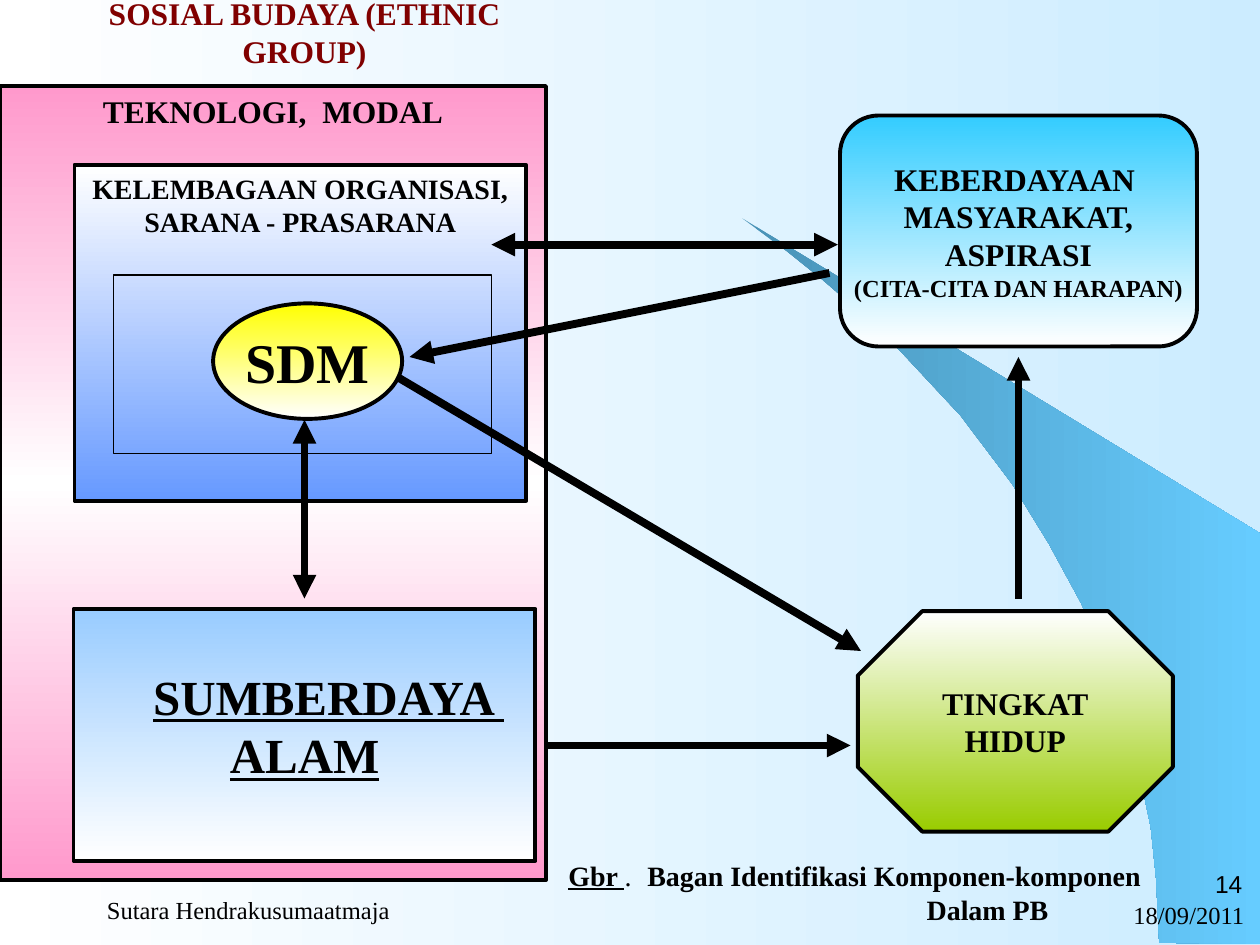
from copy import deepcopy
from dataclasses import dataclass

from lxml import etree
from pptx import Presentation
from pptx import util as u
from pptx.dml.color import RGBColor
from pptx.enum import shapes, text
from pptx.oxml.ns import qn

CELL = u.Inches(10) // 120
COLUMNS, ROWS = 120, 90
KIND = shapes.MSO_SHAPE
ALIGN = text.PP_ALIGN
ANCHOR = text.MSO_ANCHOR


@dataclass(frozen=True)
class Theme:
    serif: str = "Times New Roman"
    sans: str = "Arial"
    ink: str = "000000"
    title: str = "800000"
    page: tuple = ("FFFFFF", "CCECFF")
    swoosh: tuple = ("4992B6", "66CCFF")
    capital: tuple = ("FF99CC", "FFFFFF", "FF99CC")
    institution: tuple = ("FFFFFF", "6699FF")
    people: tuple = ("FFFF00", "FFFFFF")
    nature: tuple = ("99CCFF", "FFFFFF")
    empowerment: tuple = ("33CCFF", "FFFFFF")
    living: tuple = ("FFFFFF", "99CC00")
    small: int = 14
    label: int = 16
    body: int = 18
    large: int = 28
    huge: int = 32
    hairline: float = 0.75
    outline: float = 2.25
    arrow: float = 4.5


THEME = Theme()


@dataclass(frozen=True)
class Box:
    left: float
    top: float
    width: float
    height: float

    def inner(self, left, top, width, height):
        return Box(self.left + left, self.top + top, width, height)

    def emu(self):
        return [round(v * CELL) for v in (self.left, self.top, self.width, self.height)]


def paint(fill, node, colours, angle):
    fill.gradient()
    fill.gradient_angle = angle
    stop_list = node.find(".//" + qn("a:gsLst"))
    while len(stop_list) < len(colours):
        stop_list.append(deepcopy(stop_list[-1]))
    for index, (stop, colour) in enumerate(zip(fill.gradient_stops, colours)):
        stop.color.rgb = RGBColor.from_string(colour)
        stop.position = index / (len(colours) - 1)


def style(para, size, colour=THEME.ink, bold=True, font=THEME.serif):
    for span in para.runs:
        span.font.name = font
        span.font.size = u.Pt(size)
        span.font.bold = bold
        span.font.color.rgb = RGBColor.from_string(colour)


def write(shape, words, size, align=ALIGN.CENTER, anchor=ANCHOR.MIDDLE, wrap=False, **look):
    frame = shape.text_frame
    frame.text = words
    frame.word_wrap = wrap
    frame.auto_size = text.MSO_AUTO_SIZE.NONE
    frame.vertical_anchor = anchor
    for para in frame.paragraphs:
        para.alignment = align
        style(para, size, **look)
    return frame


def add_block(page, kind, box, colours=None, weight=THEME.outline):
    shape = page.shapes.add_shape(kind, *box.emu())
    shape.shadow.inherit = False
    shape.line.color.rgb = RGBColor.from_string(THEME.ink)
    shape.line.width = u.Pt(weight)
    if colours:
        paint(shape.fill, shape.element.spPr, colours, 270)
    else:
        shape.fill.background()
    return shape


def add_arrow(page, start, end, ends):
    points = [round(v * CELL) for v in (*start, *end)]
    arrow = page.shapes.add_connector(shapes.MSO_CONNECTOR.STRAIGHT, *points)
    arrow.line.color.rgb = RGBColor.from_string(THEME.ink)
    arrow.line.width = u.Pt(THEME.arrow)
    properties = arrow.element.spPr
    line = properties.find(qn("a:ln"))
    for tag in ends:
        etree.SubElement(line, qn(f"a:{tag}")).set("type", "triangle")
    etree.SubElement(properties, qn("a:effectLst"))


def draw_swoosh(page, box):
    outline = [(39.7, 69), (49.3, 69.1), (49.3, 30), (0, 0), (4.2, 3.1), (7.7, 5.9),
               (11.5, 9.2), (15.2, 12.8), (20.8, 18.8), (25.7, 25.3), (29.2, 31),
               (32.3, 36.7), (34.7, 42.6), (36.5, 47.9), (37.7, 52.3), (38.9, 58),
               (39.4, 62.8)]
    points = [(round((box.left + x) * CELL), round((box.top + y) * CELL)) for x, y in outline]
    builder = page.shapes.build_freeform(*points[0], scale=1.0)
    builder.add_line_segments(points[1:], close=True)
    swoosh = builder.convert_to_shape()
    swoosh.shadow.inherit = False
    swoosh.line.fill.background()
    paint(swoosh.fill, swoosh.element.spPr, THEME.swoosh, 0)


def draw_title(page, box):
    title = page.shapes.title
    title.left, title.top, title.width, title.height = box.emu()
    write(title, "SOSIAL BUDAYA (ETHNIC GROUP)", THEME.body, colour=THEME.title)


def draw_capital(page, box):
    capital = add_block(page, KIND.RECTANGLE, box, THEME.capital)
    write(capital, "TEKNOLOGI,  MODAL", THEME.body, anchor=ANCHOR.TOP)

    institution = add_block(page, KIND.RECTANGLE, box.inner(7.1, 7.5, 43, 32), THEME.institution)
    write(institution, "KELEMBAGAAN ORGANISASI,\nSARANA - PRASARANA", THEME.label,
          anchor=ANCHOR.TOP)

    people = add_block(page, KIND.OVAL, box.inner(20.3, 20.7, 18, 11), THEME.people)
    write(people, "SDM", THEME.huge)
    add_block(page, KIND.RECTANGLE, box.inner(10.8, 18, 36, 17), weight=THEME.hairline)

    nature = add_block(page, KIND.RECTANGLE, box.inner(7, 49.8, 44, 24), THEME.nature)
    frame = write(nature, "SUMBERDAYA \nALAM", THEME.large, wrap=True)
    frame.margin_bottom = round(2.5 * CELL)
    frame.paragraphs[0]._p.get_or_add_pPr().set("marL", str(round(4.6 * CELL)))
    for para in frame.paragraphs:
        para.runs[0].font.underline = True


def draw_welfare(page, box):
    empowerment = add_block(page, KIND.ROUNDED_RECTANGLE, box.inner(0, 0, 34, 22),
                            THEME.empowerment)
    frame = write(empowerment, "KEBERDAYAAN \nMASYARAKAT,\nASPIRASI\n(CITA-CITA DAN HARAPAN)",
                  THEME.body)
    style(frame.paragraphs[-1], THEME.small)
    living = add_block(page, KIND.OCTAGON, box.inner(1.7, 47.2, 30, 21), THEME.living)
    write(living, "TINGKAT\nHIDUP", THEME.body)


def draw_relations(page):
    both, head, tail = ("headEnd", "tailEnd"), ("headEnd",), ("tailEnd",)
    for start, end, ends in [
        ((29, 40), (29, 57), both),
        ((46.8, 23.3), (79.8, 23.3), both),
        ((39, 34), (79, 26), head),
        ((38, 36), (82, 62), tail),
        ((52, 71), (81, 71), tail),
        ((97, 34), (97, 57), head),
    ]:
        add_arrow(page, start, end, ends)


def draw_footer(page, box):
    def note(place, words, align, anchor=ANCHOR.MIDDLE, font=THEME.serif):
        field = page.shapes.add_textbox(*place.emu())
        return write(field, words, THEME.small, align, anchor, bold=False, font=font)

    note(box.inner(94.7, 4, 25, 5), "18/09/2011", ALIGN.RIGHT)
    note(box.inner(9, 3, 56, 6), "Sutara Hendrakusumaatmaja", ALIGN.LEFT)
    number = note(box.inner(94.5, 0, 25, 5), "14", ALIGN.RIGHT, ANCHOR.BOTTOM, THEME.sans)
    number.margin_top = number.margin_bottom = 0


def draw_caption(page, box):
    caption = page.shapes.add_textbox(*box.emu())
    frame = write(caption, "Gbr \nDalam PB", THEME.label, anchor=ANCHOR.TOP, wrap=True)
    first, second = frame.paragraphs
    for words in (".", "  ", "Bagan Identifikasi Komponen-komponen"):
        first.add_run().text = words
    style(first, THEME.label)
    mark, dot, gap, _ = first.runs
    mark.font.underline = True
    dot.font.bold = gap.font.bold = False
    gap.font.size = u.Pt(THEME.body)
    second._p.get_or_add_pPr().set("marL", str(round(25.3 * CELL)))


def main():
    deck = Presentation()
    deck.slide_width, deck.slide_height = COLUMNS * CELL, ROWS * CELL
    page = deck.slides.add_slide(deck.slide_layouts[5])
    paint(page.background.fill, page.element.cSld, THEME.page, 0)
    draw_swoosh(page, Box(70.7, 20.8, 49.3, 69.1))
    draw_title(page, Box(3, 0, 52, 6))
    draw_footer(page, Box(0, 80.6, COLUMNS, 9.4))
    draw_capital(page, Box(0, 8.2, 52, 75.6))
    draw_welfare(page, Box(80, 11, 34, 68.2))
    draw_relations(page)
    draw_caption(page, Box(52.4, 80.8, 58, 8))
    deck.save("out.pptx")


if __name__ == "__main__":
    main()
